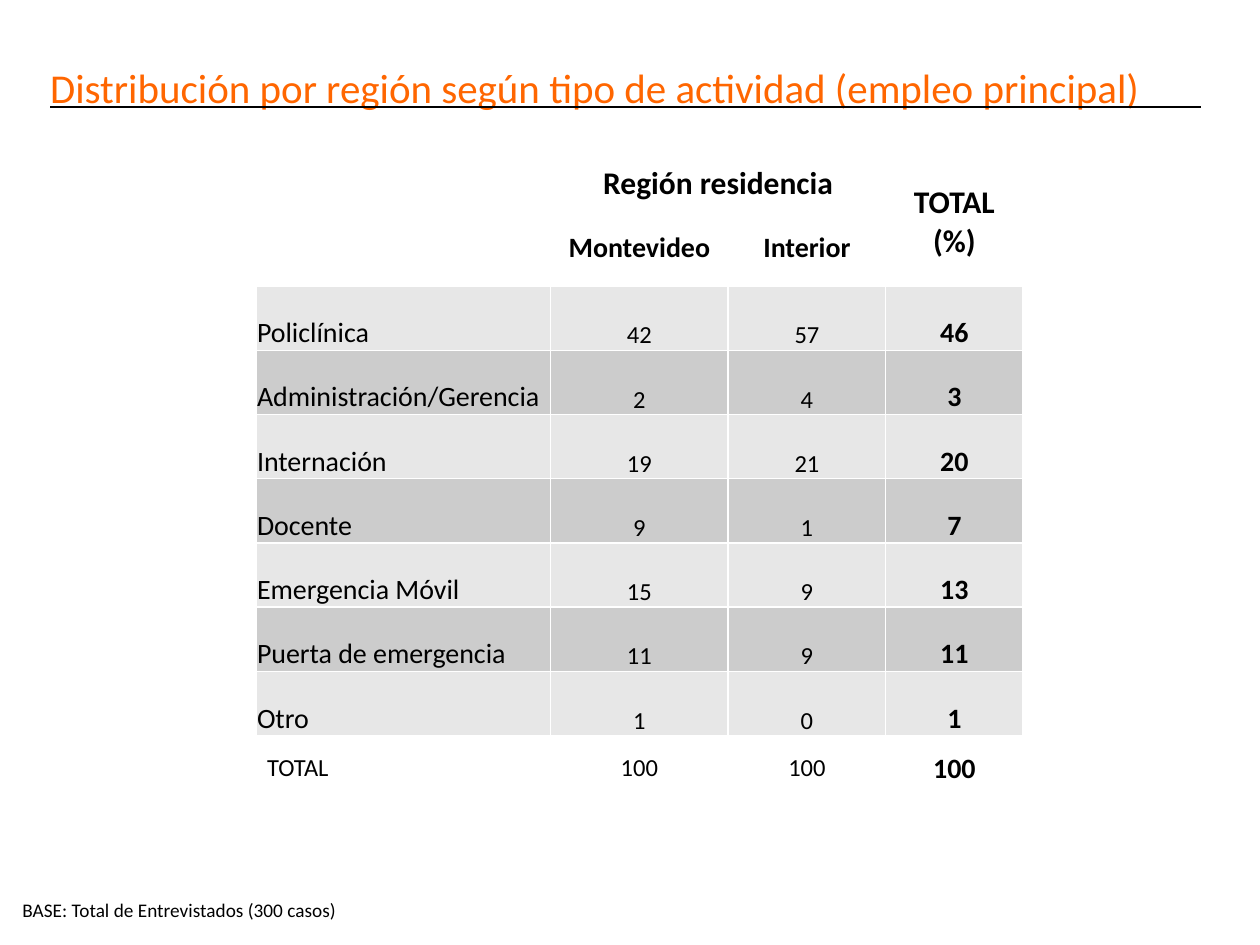
import lxml.etree
import pptx
import pptx.dml.color
import pptx.enum.shapes
import pptx.enum.text
import pptx.oxml.ns
import pptx.util

Inches = pptx.util.Inches
Align = pptx.enum.text.PP_ALIGN
Anchor = pptx.enum.text.MSO_ANCHOR
qn = pptx.oxml.ns.qn

HUES = {"ink": "000000", "title": "FF6600", "line": "FFFFFF",
        "plain": "FFFFFF", "light": "E7E7E7", "dark": "CCCCCC"}
COLS = [2.34, 1.41, 1.25, 1.09]
ROWS = [0.41, 0.6] + [0.51] * 8
HEAD = [["", "Región residencia", "", "TOTAL\n(%)"],
        ["", "Montevideo", "Interior", ""]]
DATA = [["Policlínica", 42, 57, 46],
        ["Administración/Gerencia", 2, 4, 3],
        ["Internación", 19, 21, 20],
        ["Docente", 9, 1, 7],
        ["Emergencia Móvil", 15, 9, 13],
        ["Puerta de emergencia", 11, 9, 11],
        ["Otro", 1, 0, 1]]
TOTAL = ["TOTAL", 100, 100, 100]


def tint(name):
    return pptx.dml.color.RGBColor.from_string(HUES[name])


class Page:
    """Holds the font and the slide being drawn."""

    def __init__(self, slide, font):
        self.slide = slide
        self.font = font

    def style(self, item, form):
        for name, value in form.items():
            setattr(item, name, value)

    def label(self, frame, text, size, hue="ink", bold=False, align=Align.LEFT):
        frame.text = text
        form = {"name": self.font, "size": pptx.util.Pt(size), "bold": bold}
        for para in frame.paragraphs:
            para.alignment = align
            self.style(para.font, form)
            para.font.color.rgb = tint(hue)

    def text(self, text, place, size, hue="ink", **form):
        box = self.slide.shapes.add_textbox(*map(Inches, place))
        self.style(box.text_frame, {"word_wrap": True, **form})
        self.label(box.text_frame, text, size, hue)

    def rule(self, left, right, top):
        kind = pptx.enum.shapes.MSO_CONNECTOR.STRAIGHT
        line = self.slide.shapes.add_connector(
            kind, *map(Inches, (left, top, right, top)))
        line.line.width = pptx.util.Pt(0.75)
        line.line.color.rgb = tint("ink")
        lxml.etree.SubElement(line._element.spPr, qn("a:effectLst"))

    def cell(self, cell, text, size, fill, anchor, **form):
        self.style(cell, {"margin_left": Inches(0.01), "margin_right": Inches(0.01),
                          "margin_top": Inches(0.01), "margin_bottom": 0,
                          "vertical_anchor": anchor})
        props = cell._tc.get_or_add_tcPr()
        for side in ("lnL", "lnR", "lnT", "lnB"):
            edge = lxml.etree.SubElement(props, qn("a:" + side), w="12700")
            paint = lxml.etree.SubElement(edge, qn("a:solidFill"))
            lxml.etree.SubElement(paint, qn("a:srgbClr"), val=HUES["line"])
        cell.fill.solid()
        cell.fill.fore_color.rgb = tint(fill)
        self.label(cell.text_frame, text, size, **form)

    def table(self, left, top):
        size = (left, top, sum(COLS), sum(ROWS))
        table = self.slide.shapes.add_table(
            len(ROWS), len(COLS), *map(Inches, size)).table
        for col, width in zip(table.columns, COLS):
            col.width = Inches(width)
        for row, height in zip(table.rows, ROWS):
            row.height = Inches(height)
        table.cell(0, 1).merge(table.cell(0, 2))
        table.cell(0, 3).merge(table.cell(1, 3))
        last = len(ROWS) - 1
        for r, row in enumerate(HEAD + DATA + [TOTAL]):
            head, body = r < 2, 2 <= r < last
            fill = ("light", "dark")[r % 2] if body else "plain"
            anchor = Anchor.BOTTOM if body else Anchor.MIDDLE
            for c, value in enumerate(row):
                if head:
                    size = 16 if r and c in (1, 2) else 18
                else:
                    size = 16 if c == 3 or (body and c == 0) else 14
                self.cell(table.cell(r, c), str(value), size, fill, anchor,
                          bold=head or c == 3,
                          align=Align.CENTER if c else Align.LEFT)
        table.cell(last, 0).margin_left = Inches(0.09)


def main():
    deck = pptx.Presentation()
    deck.slide_width, deck.slide_height = Inches(10), Inches(7.5)
    page = Page(deck.slides.add_slide(deck.slide_layouts[6]), "Calibri")
    page.text("BASE: Total de Entrevistados (300 casos)", (0.08, 7.08, 9.14, 0.3), 11)
    page.text("Distribución por región según tipo de actividad (empleo principal)",
              (0.3, 0.5, 9.94, 0.69), 23.4, "title", margin_top=0)
    page.rule(0.4, 9.53, 0.85)
    page.table(2.03, 1.25)
    deck.save("out.pptx")


if __name__ == "__main__":
    main()
